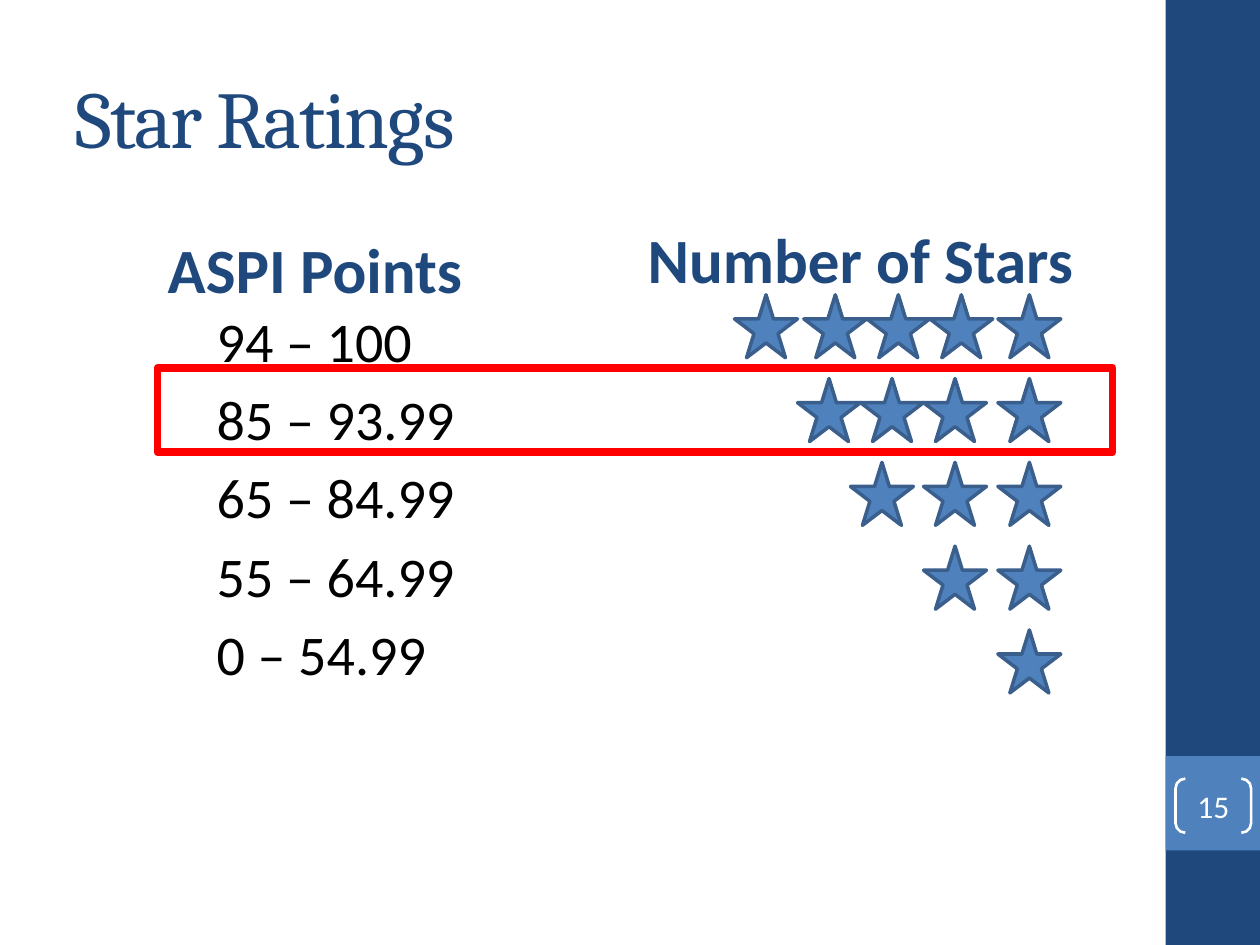
"""Builds the Star Ratings slide: point bands against number of stars."""
from pptx import Presentation
from pptx.dml.color import RGBColor
from pptx.enum import shapes, text
from pptx.util import Inches, Pt

COLORS = {"navy": "1F497D", "blue": "4F81BD", "edge": "3A5F8C",
          "red": "FF0000", "white": "FFFFFF", "black": "000000"}
TITLE = "Star Ratings"
HEADINGS = [("ASPI Points", 0.5, 2.08), ("Number of Stars", 4.83, 2)]
RATINGS = [
    ("94 – 100", [5.83, 6.38, 6.88, 7.38, 7.92]),
    ("85 – 93.99", [6.33, 6.83, 7.33, 7.92]),
    ("65 – 84.99", [6.75, 7.33, 7.92]),
    ("55 – 64.99", [7.33, 7.92]),
    ("0 – 54.99", [7.92]),
]
PAGE = "15"
STAR_TOP, STAR_PITCH, STAR_SIZE = 2.34, 0.665, 0.5
COLUMN_WIDTH = 4
BAR_LEFT, BAR_WIDTH = 9.25, 0.75


def color(name):
    return RGBColor.from_string(COLORS[name])


def place(box):
    return [Inches(length) for length in box]


def add_outline(slide, kind, box, fill=None, line=None, width=0):
    part = slide.shapes.add_shape(kind, *place(box))
    part.shadow.inherit = False
    if fill:
        part.fill.solid()
        part.fill.fore_color.rgb = color(fill)
    else:
        part.fill.background()
    if line:
        part.line.color.rgb = color(line)
        part.line.width = Pt(width)
    else:
        part.line.fill.background()
    return part


def write(frame, lines, size, tint, font="Calibri", bold=False,
          align=text.PP_ALIGN.LEFT, before=0):
    frame.word_wrap = True
    frame.auto_size = text.MSO_AUTO_SIZE.NONE
    for index, line in enumerate(lines):
        paragraph = frame.add_paragraph() if index else frame.paragraphs[0]
        paragraph.text = line
        paragraph.alignment = align
        paragraph.space_before = Pt(before if index else 0)
        paragraph.font.name = font
        paragraph.font.size = Pt(size)
        paragraph.font.bold = bold
        paragraph.font.color.rgb = color(tint)


def main():
    deck = Presentation()
    deck.slide_width, deck.slide_height = Inches(10), Inches(7.5)
    slide = deck.slides.add_slide(deck.slide_layouts[5])
    kinds = shapes.MSO_SHAPE

    add_outline(slide, kinds.RECTANGLE, (BAR_LEFT, 0, BAR_WIDTH, 7.5), "navy")
    add_outline(slide, kinds.RECTANGLE, (BAR_LEFT, 6, BAR_WIDTH, BAR_WIDTH), "blue")

    title = slide.shapes.title
    title.left, title.top, title.width, title.height = place((0.5, 0.3, 8.33, 1.25))
    title.text_frame.vertical_anchor = text.MSO_ANCHOR.MIDDLE
    write(title.text_frame, [TITLE], 46, "navy", "Cambria")
    title.text_frame.paragraphs[0].runs[0].font._element.set("spc", "-100")

    for heading, left, top in HEADINGS:
        frame = slide.shapes.add_textbox(*place((left, top, COLUMN_WIDTH, 0.7))).text_frame
        frame.vertical_anchor = text.MSO_ANCHOR.BOTTOM
        frame.margin_top, frame.margin_bottom = 0, Inches(0.35)
        write(frame, [heading], 36, "navy", bold=True, align=text.PP_ALIGN.CENTER)

    points = slide.shapes.add_textbox(*place((0.5, 2.38, COLUMN_WIDTH, 4.32))).text_frame
    points.margin_left = Inches(1.22)
    write(points, [band for band, _ in RATINGS], 32, "black", before=6.4)

    page = add_outline(slide, kinds.DOUBLE_BRACKET, (9.33, 6.18, 0.6, 0.43),
                       line="white", width=1.5)
    page.adjustments[0] = 0.18
    frame = page.text_frame
    frame.margin_left = frame.margin_right = frame.margin_top = frame.margin_bottom = 0
    frame.vertical_anchor = text.MSO_ANCHOR.MIDDLE
    write(frame, [PAGE], 18, "white", align=text.PP_ALIGN.CENTER)

    for row, (_, lefts) in enumerate(RATINGS):
        for left in lefts:
            star = (left, STAR_TOP + row * STAR_PITCH, STAR_SIZE, STAR_SIZE)
            add_outline(slide, kinds.STAR_5_POINT, star, "blue", "edge", 2)

    add_outline(slide, kinds.RECTANGLE, (1.25, 2.92, 7.58, 0.67), line="red", width=4.5)
    deck.save("out.pptx")


if __name__ == "__main__":
    main()
